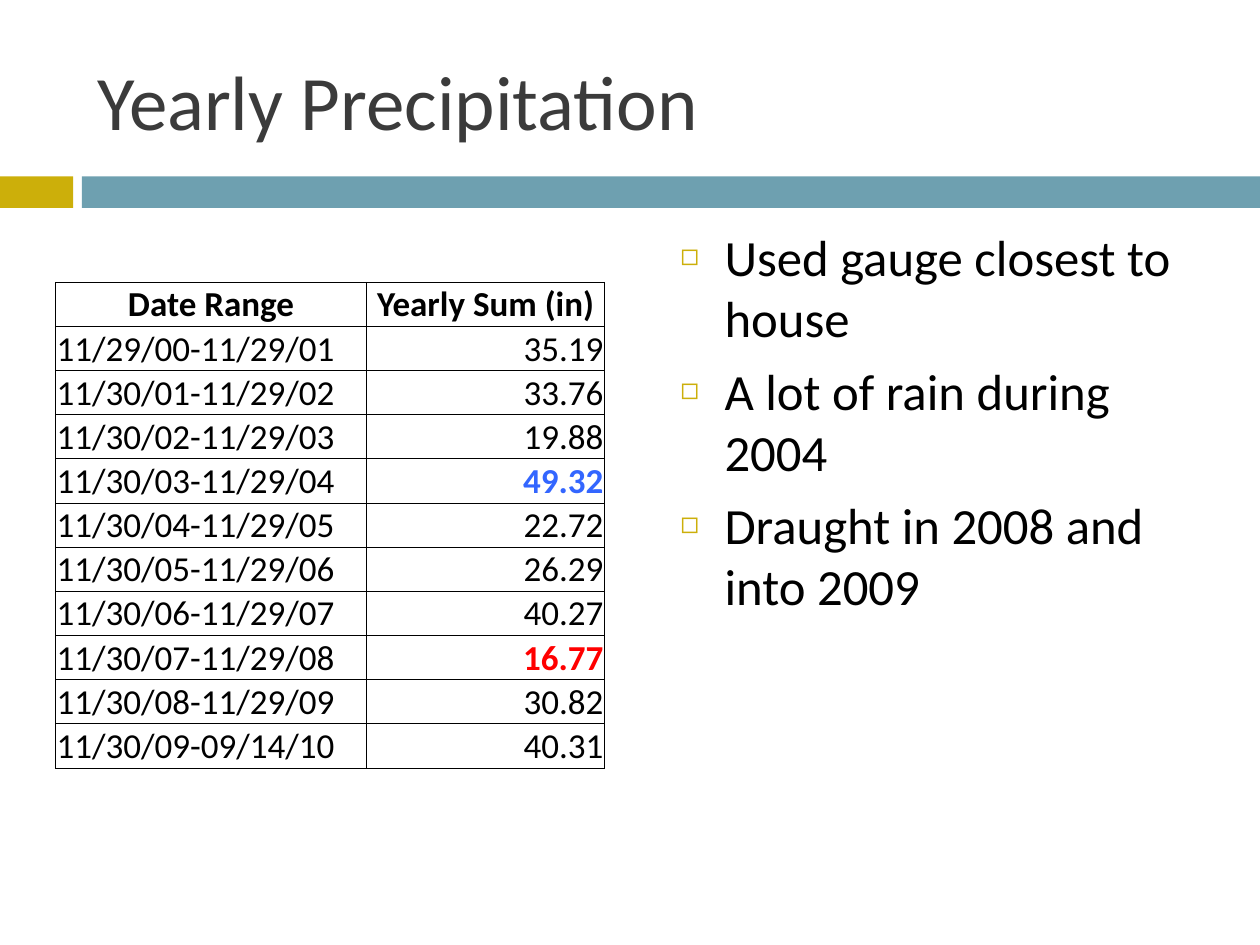
from dataclasses import dataclass

from lxml import etree
from pptx import Presentation, util as u
from pptx.dml.color import RGBColor
from pptx.enum import shapes, text
from pptx.oxml import ns

SLIDE_WIDTH, SLIDE_HEIGHT = u.Inches(10), u.Inches(7.5)


@dataclass(frozen=True)
class Theme:
    font: str = "Calibri"
    title_size: float = 44
    body_size: float = 29
    table_size: float = 20
    title: str = "3B3B3B"
    ink: str = "000000"
    paper: str = "FFFFFF"
    gold: str = "CCAF0A"
    teal: str = "6EA0B0"
    wettest: str = "3366FF"
    driest: str = "FF0000"


THEME = Theme()

BULLETS = [
    "Used gauge closest to house",
    "A lot of rain during 2004",
    "Draught in 2008 and into 2009",
]
HEADINGS = ("Date Range", "Yearly Sum (in)")
YEARLY_SUMS = [
    ("11/29/00-11/29/01", 35.19),
    ("11/30/01-11/29/02", 33.76),
    ("11/30/02-11/29/03", 19.88),
    ("11/30/03-11/29/04", 49.32),
    ("11/30/04-11/29/05", 22.72),
    ("11/30/05-11/29/06", 26.29),
    ("11/30/06-11/29/07", 40.27),
    ("11/30/07-11/29/08", 16.77),
    ("11/30/08-11/29/09", 30.82),
    ("11/30/09-09/14/10", 40.31),
]


def across(percent):
    return u.Emu(round(SLIDE_WIDTH * percent / 100))


def down(percent):
    return u.Emu(round(SLIDE_HEIGHT * percent / 100))


def box(left, top, width, height):
    """Turn percentages of the slide into a position and size."""
    return across(left), down(top), across(width), down(height)


def place(shape, area):
    shape.left, shape.top, shape.width, shape.height = area


def add_run(paragraph, wording, size, color, bold=False):
    run = paragraph.add_run()
    run.text = wording
    run.font.name = THEME.font
    run.font.size = u.Pt(size)
    run.font.bold = bold
    run.font.color.rgb = RGBColor.from_string(color)


def add_element(parent, tag, **attributes):
    return etree.SubElement(parent, ns.qn(tag), attributes)


def add_band(slide, area, color):
    band = slide.shapes.add_shape(shapes.MSO_SHAPE.RECTANGLE, *area)
    band.shadow.inherit = False
    band.fill.solid()
    band.fill.fore_color.rgb = RGBColor.from_string(color)
    band.line.fill.background()


def fill_title(title, area, wording):
    place(title, area)
    frame = title.text_frame
    frame.auto_size = text.MSO_AUTO_SIZE.NONE
    frame.vertical_anchor = text.MSO_ANCHOR.MIDDLE
    paragraph = frame.paragraphs[0]
    paragraph.alignment = text.PP_ALIGN.LEFT
    add_run(paragraph, wording, THEME.title_size, THEME.title)


def set_bullet(paragraph):
    indent = u.Inches(0.35)
    properties = paragraph._p.get_or_add_pPr()
    properties.set("marL", str(indent))
    properties.set("indent", str(-indent))
    color = add_element(properties, "a:buClr")
    add_element(color, "a:srgbClr", val=THEME.gold)
    add_element(properties, "a:buSzPct", val="60000")
    add_element(properties, "a:buFont", typeface=THEME.font)
    add_element(properties, "a:buChar", char="◻")


def fill_list(body, area, items):
    place(body, area)
    frame = body.text_frame
    frame.auto_size = text.MSO_AUTO_SIZE.NONE
    for index, item in enumerate(items):
        paragraph = frame.add_paragraph() if index else frame.paragraphs[0]
        paragraph.space_before = u.Pt(7)
        set_bullet(paragraph)
        add_run(paragraph, item, THEME.body_size, THEME.ink)


def set_borders(cell):
    """Border lines must come before the fill in the cell's properties."""
    properties = cell._tc.get_or_add_tcPr()
    for index, side in enumerate(("a:lnL", "a:lnR", "a:lnT", "a:lnB")):
        line = add_element(properties, side, w=str(u.Pt(0.5)))
        fill = add_element(line, "a:solidFill")
        add_element(fill, "a:srgbClr", val=THEME.ink)
        properties.insert(index, line)


def fill_cell(cell, wording, alignment, anchor, color=THEME.ink, bold=False):
    cell.fill.solid()
    cell.fill.fore_color.rgb = RGBColor.from_string(THEME.paper)
    set_borders(cell)
    cell.margin_left = cell.margin_right = cell.margin_top = u.Inches(0.01)
    cell.margin_bottom = 0
    cell.vertical_anchor = anchor
    paragraph = cell.text_frame.paragraphs[0]
    paragraph.alignment = alignment
    add_run(paragraph, wording, THEME.table_size, color, bold)


def add_rain_table(slide, left, top, column_widths, row_height):
    row_count = len(YEARLY_SUMS) + 1
    area = box(left, top, sum(column_widths), row_height * row_count)
    table = slide.shapes.add_table(row_count, len(HEADINGS), *area).table
    table.first_row = table.horz_banding = False
    for column, width in zip(table.columns, column_widths):
        column.width = across(width)

    for index, heading in enumerate(HEADINGS):
        fill_cell(table.cell(0, index), heading, text.PP_ALIGN.CENTER,
                  text.MSO_ANCHOR.MIDDLE, bold=True)

    sums = [total for _, total in YEARLY_SUMS]
    highlights = {max(sums): THEME.wettest, min(sums): THEME.driest}
    for row, (dates, total) in enumerate(YEARLY_SUMS, start=1):
        fill_cell(table.cell(row, 0), dates, text.PP_ALIGN.LEFT,
                  text.MSO_ANCHOR.BOTTOM)
        fill_cell(table.cell(row, 1), f"{total:.2f}", text.PP_ALIGN.RIGHT,
                  text.MSO_ANCHOR.BOTTOM, highlights.get(total, THEME.ink),
                  total in highlights)


def main():
    presentation = Presentation()
    presentation.slide_width = SLIDE_WIDTH
    presentation.slide_height = SLIDE_HEIGHT
    slide = presentation.slides.add_slide(presentation.slide_layouts[1])

    add_band(slide, box(0, 18.67, 5.8, 3.33), THEME.gold)
    add_band(slide, box(6.5, 18.67, 93.5, 3.33), THEME.teal)
    fill_title(slide.shapes.title, box(6.7, 3.33, 89.2, 14.4),
               "Yearly Precipitation")
    fill_list(slide.placeholders[1], box(53, 23.2, 42.5, 66.67), BULLETS)
    add_rain_table(slide, 4.4, 29.87, (24.7, 18.9), 4.63)

    presentation.save("out.pptx")


if __name__ == "__main__":
    main()
